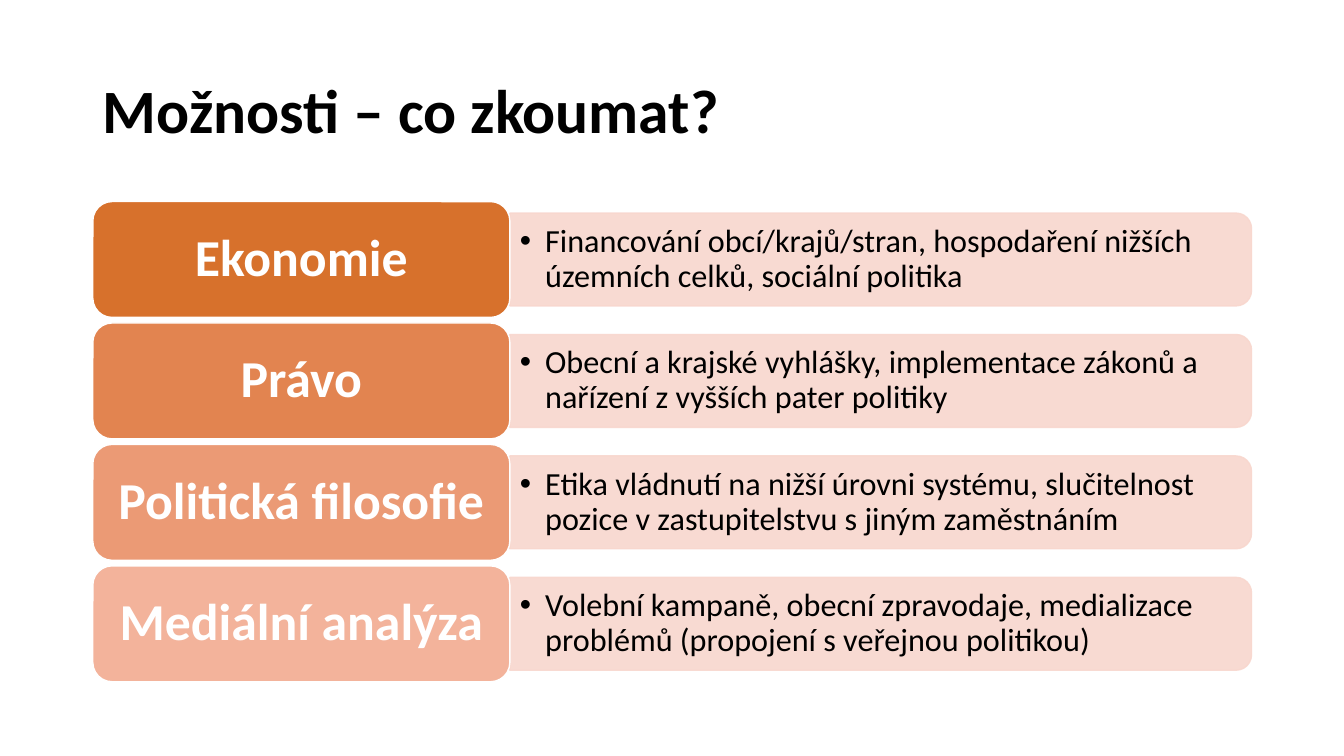
from lxml import etree
from pptx import Presentation
from pptx.dml.color import RGBColor
from pptx.enum import shapes as sh, text as tx
from pptx.oxml import ns
from pptx.util import Cm, Pt

TITLE = "Možnosti – co zkoumat?"
ROWS = [
    ("Ekonomie", "Financování obcí/krajů/stran, hospodaření nižších "
     "územních celků, sociální politika"),
    ("Právo", "Obecní a krajské vyhlášky, implementace zákonů a "
     "nařízení z vyšších pater politiky"),
    ("Politická filosofie", "Etika vládnutí na nižší úrovni systému, "
     "slučitelnost pozice v zastupitelstvu s jiným zaměstnáním"),
    ("Mediální analýza", "Volební kampaně, obecní zpravodaje, medializace "
     "problémů (propojení s veřejnou politikou)"),
]
HEX = {"black": "000000", "white": "FFFFFF", "bar": "F8D7CE"}
TINTS = ["D7712C", "E28450", "EB9A75", "F3B39B"]
LEFT, TOP, STEP = 2.34, 5.08, 3.06
TAB_W, TAB_H = 10.51, 2.92
BAR_W, BAR_H = 18.69, 2.34
TEXT_W, TEXT_H = 18.58, 2.12
SHAPE = sh.MSO_SHAPE
ALIGN = tx.PP_ALIGN
FONTS = {
    "title": {"size": Pt(44), "bold": True},
    "tab": {"size": Pt(37), "bold": True},
    "note": {"size": Pt(23), "bold": False},
}


def rgb(code):
    return RGBColor.from_string(code)


def write(shape, words, kind, color, align, pad):
    frame = shape.text_frame
    side, edge = pad
    look = {"word_wrap": True, "auto_size": tx.MSO_AUTO_SIZE.NONE,
            "vertical_anchor": tx.MSO_ANCHOR.MIDDLE,
            "margin_left": Cm(side), "margin_right": Cm(side),
            "margin_top": Cm(edge), "margin_bottom": Cm(edge)}
    for key, value in look.items():
        setattr(frame, key, value)
    para = frame.paragraphs[0]
    para.alignment, para.line_spacing = align, 0.9
    run = para.add_run()
    run.text = words
    for key, value in {"name": "Calibri", **FONTS[kind]}.items():
        setattr(run.font, key, value)
    run.font.color.rgb = rgb(HEX[color])
    return para


def block(kind, x, y, w, h, fill, line):
    shape = slide.shapes.add_shape(kind, Cm(x), Cm(y), Cm(w), Cm(h))
    shape.shadow.inherit = False
    shape.fill.solid()
    shape.fill.fore_color.rgb = rgb(fill)
    shape.line.color.rgb = rgb(line)
    shape.line.width = Pt(1)
    return shape


def add_bar(mid):
    x = LEFT + TAB_W + (BAR_W - BAR_H) / 2
    bar = block(SHAPE.ROUND_2_SAME_RECTANGLE, x, mid - BAR_W / 2,
                BAR_H, BAR_W, HEX["bar"], HEX["bar"])
    bar.rotation = 90
    for color in bar._element.spPr.iter(ns.qn("a:srgbClr")):
        etree.SubElement(color, ns.qn("a:alpha"), val="90000")


def add_note(mid, words):
    box = slide.shapes.add_textbox(Cm(LEFT + TAB_W), Cm(mid - TEXT_H / 2),
                                   Cm(TEXT_W), Cm(TEXT_H))
    para = write(box, words, "note", "black", ALIGN.LEFT, (0.25, 0.13))
    props = para._p.get_or_add_pPr()
    props.set("marL", str(Cm(0.64)))
    props.set("indent", str(-Cm(0.64)))
    etree.SubElement(props, ns.qn("a:buFont"), typeface="Arial")
    etree.SubElement(props, ns.qn("a:buChar"), char="•")


def add_tab(y, words, tint):
    tab = block(SHAPE.ROUNDED_RECTANGLE, LEFT, y, TAB_W, TAB_H,
                tint, HEX["white"])
    write(tab, words, "tab", "white", ALIGN.CENTER, (0.38, 0.19))


deck = Presentation()
deck.slide_width, deck.slide_height = Cm(33.87), Cm(19.05)
slide = deck.slides.add_slide(deck.slide_layouts[5])
title = slide.shapes.title
spot = {"left": 2.34, "top": 1.02, "width": 29.21, "height": 3.68}
for key, value in spot.items():
    setattr(title, key, Cm(value))
write(title, TITLE, "title", "black", ALIGN.LEFT, (0.25, 0.13))

for i, ((name, note), tint) in enumerate(zip(ROWS, TINTS)):
    y = TOP + i * STEP
    mid = y + TAB_H / 2
    add_bar(mid)
    add_note(mid, note)
    add_tab(y, name, tint)

deck.save("out.pptx")
